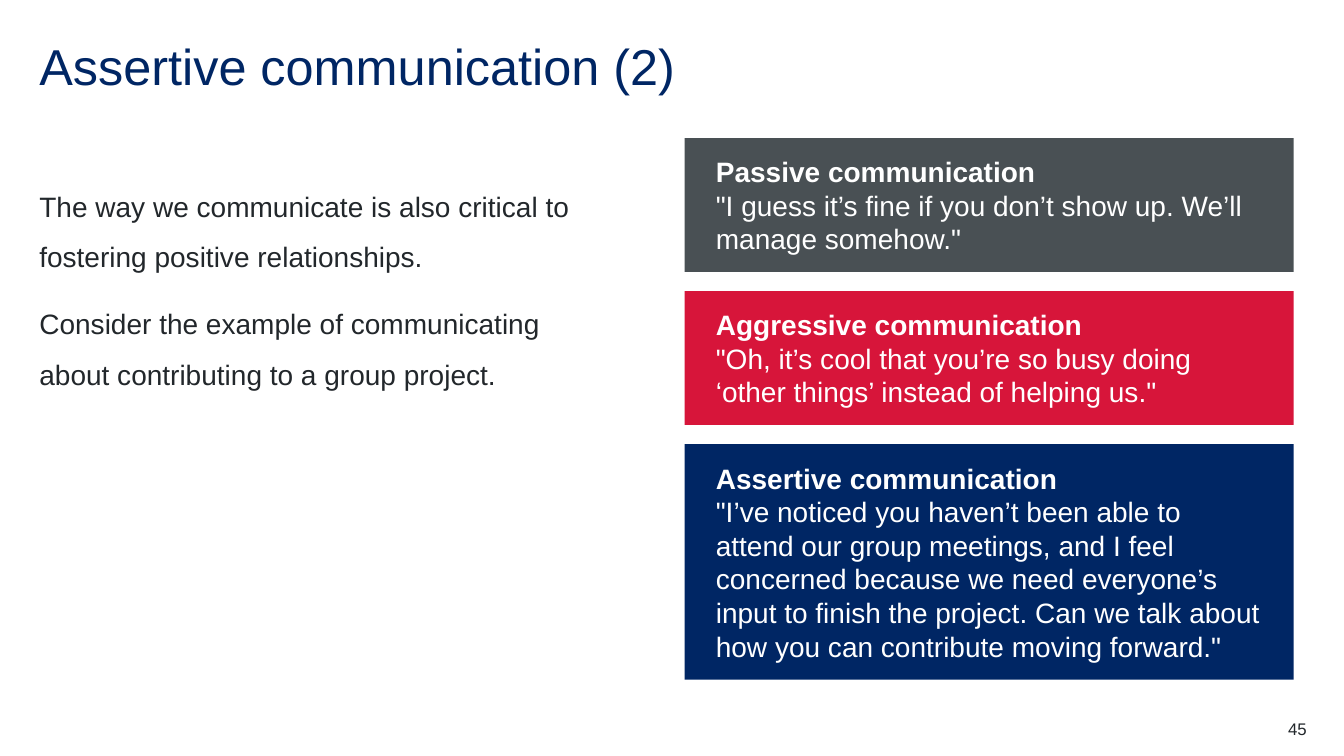
from dataclasses import dataclass
from pptx import Presentation
from pptx.dml.color import RGBColor
from pptx.enum.shapes import MSO_SHAPE
from pptx.enum.text import MSO_ANCHOR, PP_ALIGN
from pptx.oxml.ns import qn
from pptx.util import Inches, Pt


@dataclass(frozen=True)
class Theme:
    font: str = "Arial"
    navy: str = "002664"
    red: str = "D7153A"
    grey: str = "495054"
    ink: str = "22272B"
    white: str = "FFFFFF"
    title: int = 36
    body: int = 20
    small: int = 12


class Deck:
    WIDTH, HEIGHT = 13.33, 7.5
    LEFT, RIGHT = 0.39, 12.96
    CARD_X, CARD_W = 6.79, 6.04
    CARD_TOP, CARD_GAP = 1.37, 0.19
    PAD_X, PAD_Y, LINE = 0.31, 0.16, 0.336

    def __init__(self, theme):
        self.theme = theme
        self.prs = Presentation()
        self.prs.slide_width = Inches(self.WIDTH)
        self.prs.slide_height = Inches(self.HEIGHT)
        self.slide = self.prs.slides.add_slide(self.prs.slide_layouts[1])

    def place(self, sp, x, y, w, h):
        sp.left, sp.top, sp.width, sp.height = map(Inches, (x, y, w, h))

    def frame(self, sp, pad_x=0, pad_y=0, anchor=MSO_ANCHOR.TOP):
        tf = sp.text_frame
        tf.word_wrap = True
        tf.vertical_anchor = anchor
        tf.margin_left = tf.margin_right = Inches(pad_x)
        tf.margin_top = tf.margin_bottom = Inches(pad_y)
        return tf

    def set_text(self, p, text, size, color, bold=False, align=PP_ALIGN.LEFT):
        p.text = text
        p.alignment = align
        p.space_before = Pt(0)
        for r in p.runs:
            r.font.name, r.font.size, r.font.bold = self.theme.font, Pt(size), bold
            r.font.color.rgb = RGBColor.from_string(color)

    def title(self, text):
        sp = self.slide.shapes.title
        self.place(sp, self.LEFT, 0.39, self.RIGHT - self.LEFT, 0.6)
        p = self.frame(sp, anchor=MSO_ANCHOR.MIDDLE).paragraphs[0]
        self.set_text(p, text, self.theme.title, self.theme.navy)
        p.line_spacing = 0.9

    def body(self, texts):
        sp = self.slide.placeholders[1]
        self.place(sp, self.LEFT, 1.71, 5.38, 5.26)
        tf = self.frame(sp)
        tf.text = "\n".join(texts)
        for p, text in zip(tf.paragraphs, texts):
            pPr = p._p.get_or_add_pPr()
            pPr.set("marL", "0")
            pPr.set("indent", "0")
            pPr.append(pPr.makeelement(qn("a:buNone"), {}))
            self.set_text(p, text, self.theme.body, self.theme.ink)
            p.line_spacing = 1.5
            p.space_after = Pt(12)

    def card(self, y, lines, fill, heading, quote):
        h = 2 * self.PAD_Y + lines * self.LINE
        box = map(Inches, (self.CARD_X, y, self.CARD_W, h))
        sp = self.slide.shapes.add_shape(MSO_SHAPE.RECTANGLE, *box)
        sp.shadow.inherit = False
        sp.fill.solid()
        sp.fill.fore_color.rgb = RGBColor.from_string(fill)
        sp.line.fill.background()
        tf = self.frame(sp, self.PAD_X, self.PAD_Y, MSO_ANCHOR.MIDDLE)
        tf.text = f"{heading}\n{quote}"
        for p, text, bold in zip(tf.paragraphs, (heading, quote), (True, False)):
            self.set_text(p, text, self.theme.body, self.theme.white, bold)
        return y + h + self.CARD_GAP

    def cards(self, items):
        y = self.CARD_TOP
        for item in items:
            y = self.card(y, *item)

    def page_number(self, text):
        w = 0.79
        box = map(Inches, (self.RIGHT - w, 7.13, w, 0.2))
        tf = self.frame(self.slide.shapes.add_textbox(*box))
        self.set_text(tf.paragraphs[0], text, self.theme.small, self.theme.ink,
                      align=PP_ALIGN.RIGHT)


def main():
    theme = Theme()
    deck = Deck(theme)
    deck.title("Assertive communication (2)")
    deck.body([
        "The way we communicate is also critical to fostering positive relationships.",
        "Consider the example of communicating about contributing to a group project.",
    ])
    deck.cards([
        (3, theme.grey, "Passive communication",
         '"I guess it’s fine if you don’t show up. We’ll manage somehow."'),
        (3, theme.red, "Aggressive communication",
         '"Oh, it’s cool that you’re so busy doing ‘other things’ instead of helping us."'),
        (6, theme.navy, "Assertive communication",
         '"I’ve noticed you haven’t been able to attend our group meetings, and I feel '
         "concerned because we need everyone’s input to finish the project. "
         'Can we talk about how you can contribute moving forward."'),
    ])
    deck.page_number("45")
    deck.prs.save("out.pptx")


if __name__ == "__main__":
    main()
